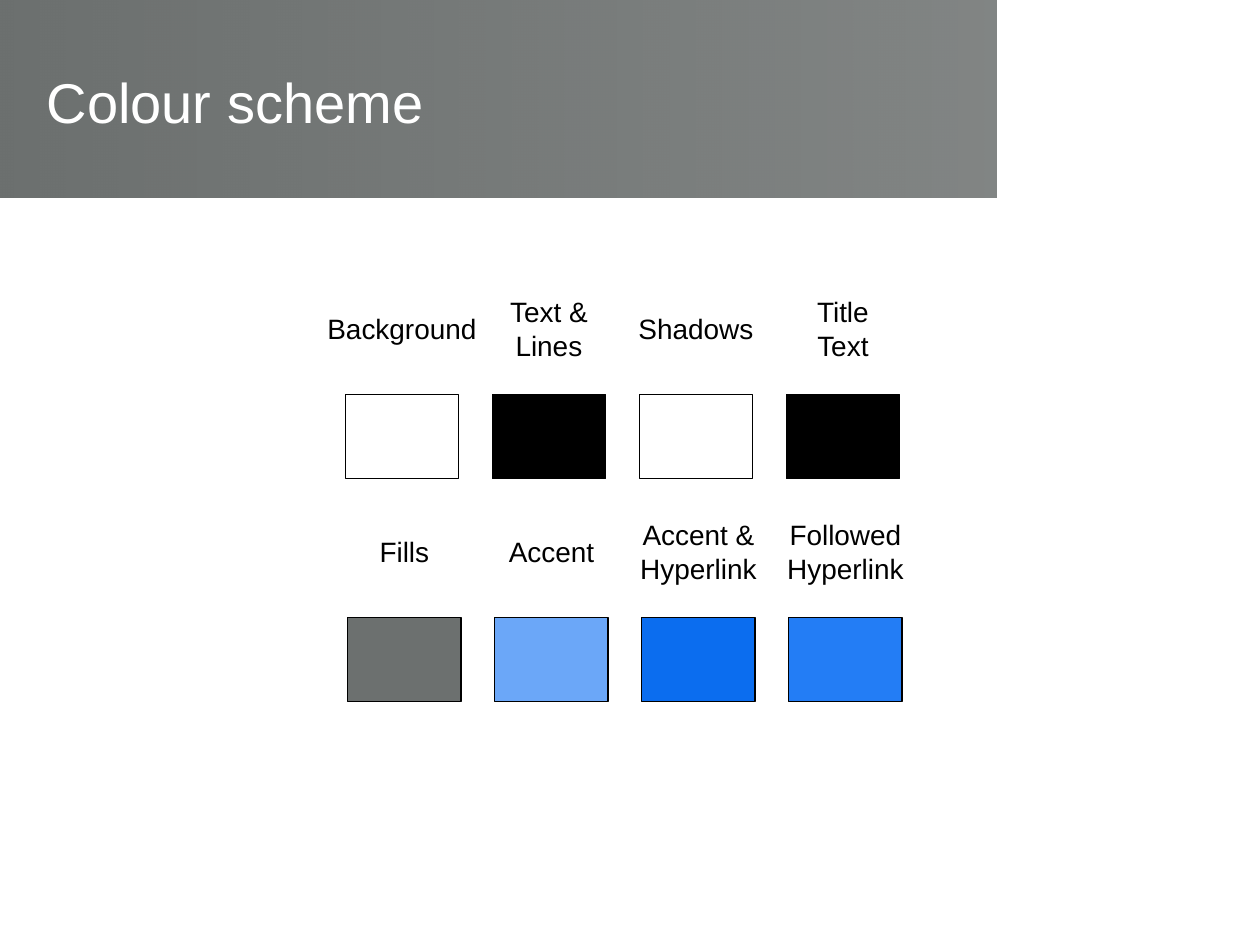
from lxml import etree
from pptx import Presentation
from pptx import util as u
from pptx.dml.color import RGBColor
from pptx.enum import shapes, text
from pptx.oxml.ns import qn

FONT, GREY, BLACK, WHITE = "Arial", "6C706F", "000000", "FFFFFF"

# Content: label (\n new paragraph, \v line break), label width, swatch colour
TITLE = "Colour scheme"
ROWS = [
    [("Background", 1.4, WHITE), ("Text &\nLines", 0.86, BLACK),
     ("Shadows", 1.13, WHITE), ("Title\vText", 0.65, BLACK)],
    [("Fills", 0.63, GREY), ("Accent", 0.9, "6BA7F8"),
     ("Accent &\nHyperlink", 1.16, "0B6DEF"), ("Followed\nHyperlink", 1.16, "237DF5")],
]

# Swatch grid, in inches
ROW_LEFT = [2.74, 2.76]
TOP, COL_STEP, ROW_STEP = 3.13, 3.5 / 3, 1.77
SWATCH_W, SWATCH_H = 0.9, 0.67
LABEL_RISE = 0.52  # from swatch top up to the label's middle
LABEL_H = {1: 0.37, 2: 0.64}


def rgb(value):
    return RGBColor.from_string(value)


def write(tf, content, size=16, color=BLACK, align=text.PP_ALIGN.CENTER,
          anchor=text.MSO_ANCHOR.TOP):
    tf.vertical_anchor = anchor
    tf.text = content
    for p in tf.paragraphs:
        p.alignment = align
        for r in p.runs:
            r.font.name, r.font.size = FONT, u.Pt(size)
            r.font.color.rgb = rgb(color)


def add_rect(s, *box):
    sp = s.shapes.add_shape(shapes.MSO_SHAPE.RECTANGLE, *map(u.Inches, box))
    sp.shadow.inherit = False
    return sp


def add_banner(s):
    sp = add_rect(s, 0, 0, 7.91, 1.57)
    sp.line.fill.background()
    sp.fill.gradient()
    sp.fill.gradient_angle = 0
    for stop, position in zip(sp.fill.gradient_stops, (0, 1)):
        stop.position = position
        stop.color.rgb = rgb(GREY)
    # The right end fades to 85 % opacity
    end = sp._element.spPr.findall(".//" + qn("a:srgbClr"))[-1]
    etree.SubElement(end, qn("a:alpha")).set("val", "85000")
    s.shapes._spTree.insert(2, sp._element)  # behind the title


def add_swatch(s, left, top, color):
    sp = add_rect(s, left, top, SWATCH_W, SWATCH_H)
    sp.fill.solid()
    sp.fill.fore_color.rgb = rgb(color)
    sp.line.color.rgb = rgb(BLACK)
    sp.line.width = u.Pt(0.75)


def add_label(s, center, middle, label, width):
    height = LABEL_H[len(label.splitlines())]
    box = (center - width / 2, middle - height / 2, width, height)
    tf = s.shapes.add_textbox(*map(u.Inches, box)).text_frame
    tf.word_wrap = False
    tf.auto_size = text.MSO_AUTO_SIZE.SHAPE_TO_FIT_TEXT
    write(tf, label)


def main():
    prs = Presentation()
    prs.slide_width, prs.slide_height = u.Inches(10), u.Inches(7.5)
    s = prs.slides.add_slide(prs.slide_layouts[5])

    # Title on its banner
    add_banner(s)
    title = s.shapes.title
    title.left, title.top, title.width, title.height = map(u.Inches, (0.27, 0.3, 7.48, 1.01))
    write(title.text_frame, TITLE, size=32, color=WHITE,
          align=text.PP_ALIGN.LEFT, anchor=text.MSO_ANCHOR.MIDDLE)

    # Labelled swatches
    for row, (row_left, items) in enumerate(zip(ROW_LEFT, ROWS)):
        top = TOP + row * ROW_STEP
        for col, (label, width, color) in enumerate(items):
            left = row_left + col * COL_STEP
            add_swatch(s, left, top, color)
            add_label(s, left + SWATCH_W / 2, top - LABEL_RISE, label, width)

    prs.save("out.pptx")


if __name__ == "__main__":
    main()
